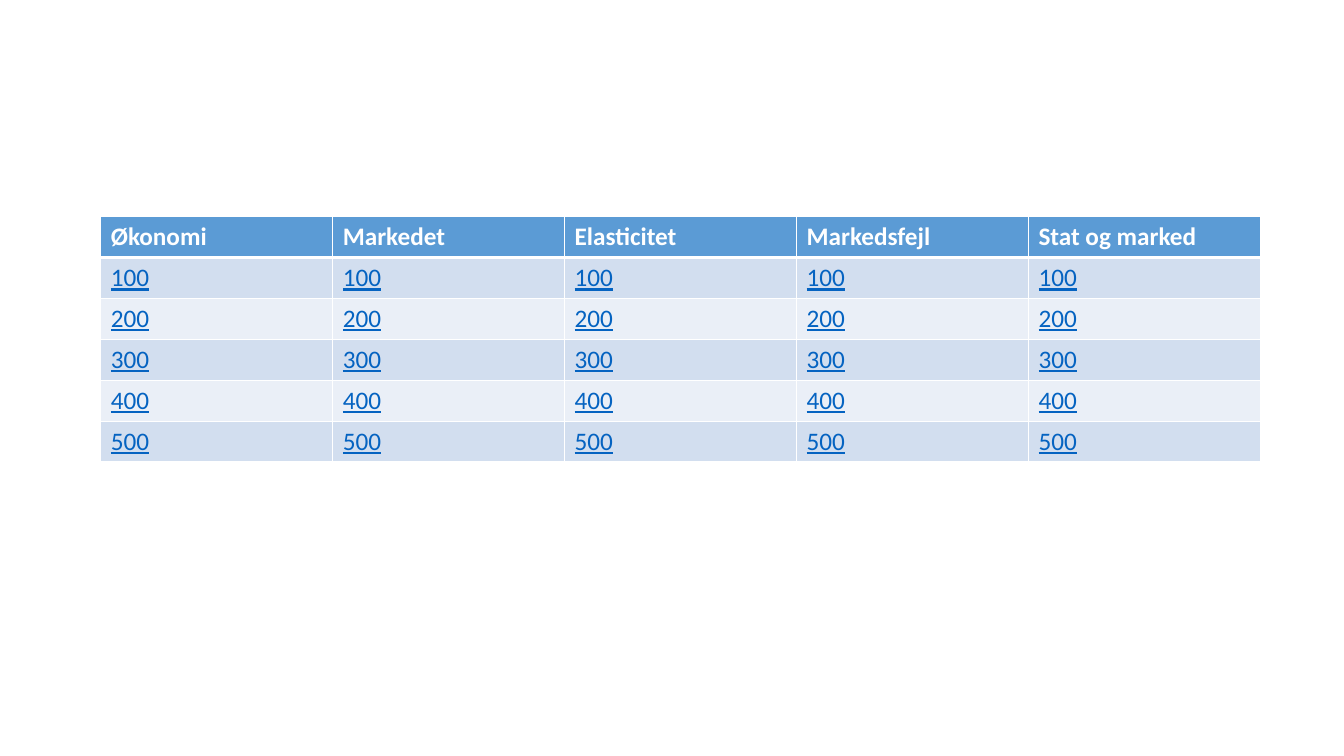
from lxml import etree
from pptx import Presentation
from pptx.dml.color import RGBColor
from pptx.oxml.ns import qn
from pptx.util import Inches, Pt

COLORS = {
    "header": "5B9BD5",
    "odd_row": "D2DEEF",
    "even_row": "EAEFF7",
    "white": "FFFFFF",
    "link": "0563C1",
}
TOPICS = ["Økonomi", "Markedet", "Elasticitet", "Markedsfejl", "Stat og marked"]
POINTS = [100, 200, 300, 400, 500]


def color(name):
    return RGBColor.from_string(COLORS[name])


def set_borders(cell, widths):
    """Draw white borders; widths maps a side (L, R, T, B) to points."""
    properties = cell._tc.get_or_add_tcPr()
    for side, width in widths.items():
        line = etree.SubElement(properties, qn(f"a:ln{side}"), w=str(Pt(width)))
        fill = etree.SubElement(line, qn("a:solidFill"))
        etree.SubElement(fill, qn("a:srgbClr"), val=COLORS["white"])


def style_cell(cell, text, row):
    is_header = row == 0
    set_borders(cell, {
        "L": 1,
        "R": 1,
        "T": 3 if row == 1 else 1,
        "B": 3 if is_header else 1,
    })
    fill_name = "header" if is_header else "odd_row" if row % 2 else "even_row"
    cell.fill.solid()
    cell.fill.fore_color.rgb = color(fill_name)

    cell.text = text
    font = cell.text_frame.paragraphs[0].font
    font.name = "Calibri"
    font.size = Pt(18)
    font.bold = is_header
    font.underline = not is_header
    font.color.rgb = color("white" if is_header else "link")


def add_quiz_board(slide):
    rows = [TOPICS] + [[str(points)] * len(TOPICS) for points in POINTS]
    table = slide.shapes.add_table(
        len(rows), len(TOPICS),
        Inches(1), Inches(2.15), Inches(11.5), Inches(2.43),
    ).table
    for row, texts in enumerate(rows):
        for column, text in enumerate(texts):
            style_cell(table.cell(row, column), text, row)


def main():
    presentation = Presentation()
    presentation.slide_width = Inches(13.33)
    presentation.slide_height = Inches(7.5)
    slide = presentation.slides.add_slide(presentation.slide_layouts[6])
    add_quiz_board(slide)
    presentation.save("out.pptx")


if __name__ == "__main__":
    main()
